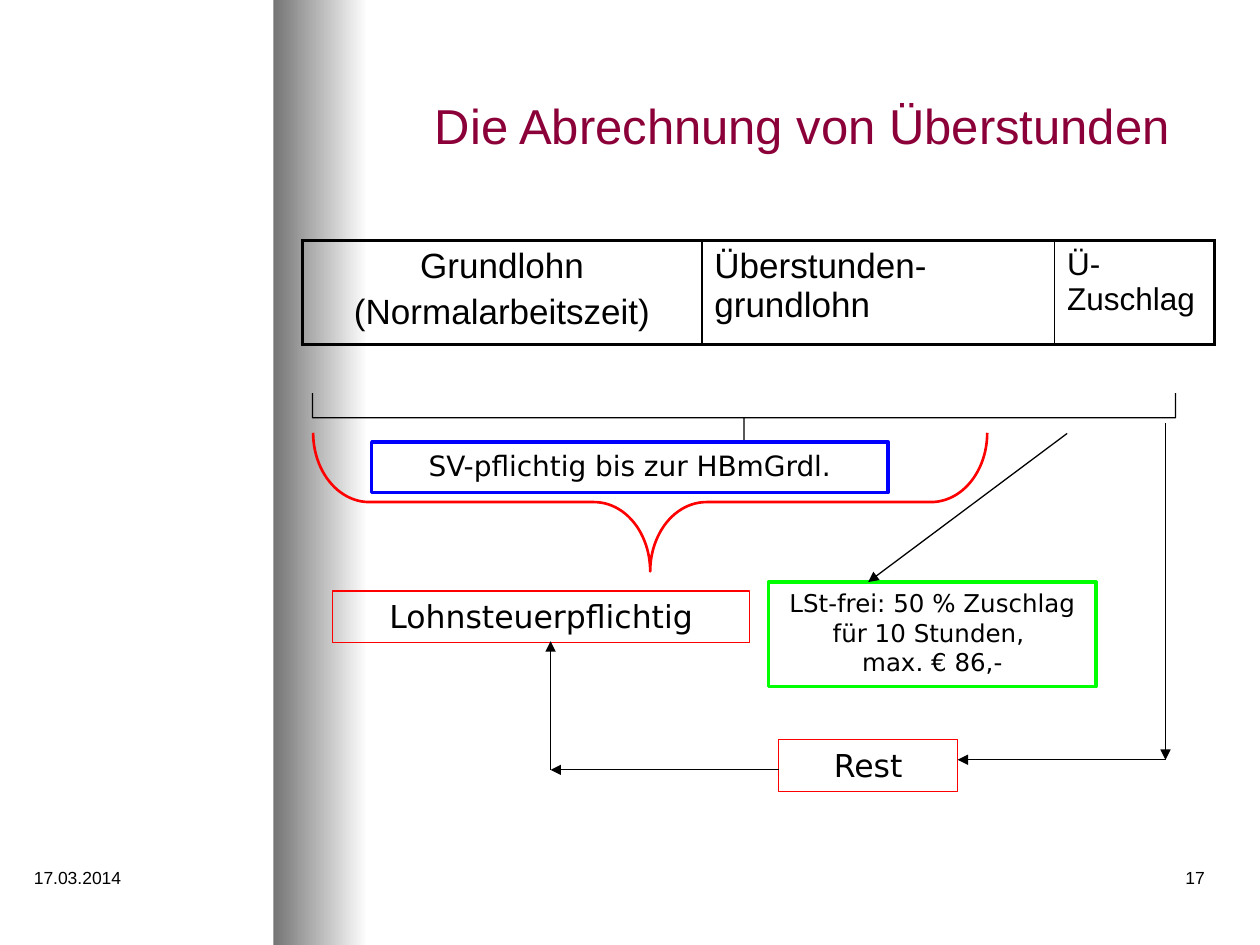
from lxml.etree import SubElement
from pptx import Presentation
from pptx.dml.color import RGBColor
from pptx.enum.shapes import MSO_CONNECTOR, MSO_SHAPE
from pptx.enum.text import MSO_ANCHOR, PP_ALIGN
from pptx.oxml.ns import qn
from pptx.util import Inches, Pt

BLACK = RGBColor(0x00, 0x00, 0x00)
WHITE = RGBColor(0xFF, 0xFF, 0xFF)
GREY = RGBColor(0x75, 0x75, 0x75)
WINE = RGBColor(0x8C, 0x00, 0x39)
RED = RGBColor(0xFF, 0x00, 0x00)
GREEN = RGBColor(0x00, 0xFF, 0x00)
BLUE = RGBColor(0x00, 0x00, 0xFF)
SANS = "Arial"
LABEL_FONT = "DejaVu Sans"


class SlideBuilder:
    """Holds the current slide and draws its elements in one style."""

    def __init__(self, slide):
        self.slide = slide

    def style(self, frame, size, font=SANS, color=BLACK, align=PP_ALIGN.LEFT):
        for paragraph in frame.paragraphs:
            paragraph.alignment = align
            for run in paragraph.runs:
                run.font.size = Pt(size)
                run.font.name = font
                run.font.bold = False
                run.font.color.rgb = color

    def title(self, text, *place):
        heading = self.slide.shapes.title
        heading.left, heading.top, heading.width, heading.height = map(Inches, place)
        heading.text_frame.text = text
        heading.text_frame.vertical_anchor = MSO_ANCHOR.MIDDLE
        self.style(heading.text_frame, 28, color=WINE, align=PP_ALIGN.RIGHT)

    def footer(self, text, left, align):
        note = self.slide.shapes.add_textbox(*map(Inches, (left, 6.83, 2.08, 0.5)))
        note.text_frame.word_wrap = True
        note.text_frame.text = text
        self.style(note.text_frame, 10, align=align)

    def gradient_band(self, *place):
        band = self.slide.shapes.add_shape(MSO_SHAPE.RECTANGLE, *map(Inches, place))
        band.shadow.inherit = False
        band.line.fill.background()
        band.fill.gradient()
        band.fill.gradient_angle = 0
        for stop, color in zip(band.fill.gradient_stops, (GREY, WHITE)):
            stop.color.rgb = color

    def outline(self, kind, place, color, weight):
        shape = self.slide.shapes.add_shape(kind, *map(Inches, place))
        shape.shadow.inherit = False
        shape.fill.background()
        shape.line.color.rgb = color
        shape.line.width = Pt(weight)
        return shape

    def box(self, text, place, color, weight, size):
        label = self.outline(MSO_SHAPE.RECTANGLE, place, color, weight)
        label.text_frame.word_wrap = True
        label.text_frame.vertical_anchor = MSO_ANCHOR.TOP
        label.text_frame.text = text
        self.style(label.text_frame, size, LABEL_FONT, align=PP_ALIGN.CENTER)

    def brace(self, place, color, weight, curve):
        brace = self.outline(MSO_SHAPE.RIGHT_BRACE, place, color, weight)
        brace.adjustments[0] = curve
        brace.adjustments[1] = 0.5
        brace.rotation = 90

    def arrow(self, start, end):
        line = self.slide.shapes.add_connector(
            MSO_CONNECTOR.STRAIGHT, *map(Inches, start + end))
        line.line.color.rgb = BLACK
        line.line.width = Pt(0.75)
        SubElement(line.line._get_or_add_ln(), qn("a:tailEnd"), type="triangle")
        SubElement(line._element.spPr, qn("a:effectLst"))

    def border(self, cell, side, weight):
        edge = SubElement(cell._tc.get_or_add_tcPr(), qn(f"a:ln{side}"), w=str(Pt(weight)))
        SubElement(SubElement(edge, qn("a:solidFill")), qn("a:srgbClr"), val=str(BLACK))

    def table(self, place, columns):
        wages = self.slide.shapes.add_table(1, len(columns), *map(Inches, place)).table
        wages.first_row = wages.horz_banding = False
        last = len(columns) - 1
        for index, (text, width, size, align) in enumerate(columns):
            wages.columns[index].width = Inches(width)
            cell = wages.cell(0, index)
            cell.text_frame.text = text
            self.style(cell.text_frame, size, align=align)
            for paragraph in cell.text_frame.paragraphs[1:]:
                paragraph.space_before = Pt(size * 0.2)
            weights = {"L": 1 if index else 2.25, "R": 1 if index < last else 2.25,
                       "T": 2.25, "B": 2.25}
            for side, weight in weights.items():
                self.border(cell, side, weight)
            cell.fill.background()


def main():
    presentation = Presentation()
    presentation.slide_width = Inches(10)
    presentation.slide_height = Inches(7.5)
    page = SlideBuilder(presentation.slides.add_slide(presentation.slide_layouts[5]))

    page.gradient_band(2.17, 0, 0.75, 7.5)
    page.footer("17.03.2014", 0.17, PP_ALIGN.LEFT)
    page.footer("17", 7.58, PP_ALIGN.RIGHT)
    page.title("Die Abrechnung von Überstunden", 0.63, 0.33, 8.75, 1.33)
    page.table((2.4, 1.91, 7.24, 0.78), [
        ("Grundlohn\n(Normalarbeitszeit)", 3.17, 20, PP_ALIGN.CENTER),
        ("Überstunden-\vgrundlohn", 2.8, 20, PP_ALIGN.LEFT),
        ("Ü-Zuschlag", 1.27, 18, PP_ALIGN.LEFT),
    ])

    page.brace((5.71, -0.11, 0.39, 6.85), BLACK, 0.75, 0)
    page.box("SV-pflichtig bis zur HBmGrdl.", (2.95, 3.51, 4.1, 0.4), BLUE, 2, 16)
    page.brace((4.61, 1.31, 1.1, 5.35), RED, 1.5, 0.405)
    page.box("Lohnsteuerpflichtig", (2.64, 4.69, 3.31, 0.41), RED, 0.75, 18)
    page.box("LSt-frei: 50 % Zuschlag für 10 Stunden, \vmax. € 86,-",
             (6.1, 4.62, 2.6, 0.83), GREEN, 2, 14)
    page.box("Rest", (6.18, 5.87, 1.42, 0.41), RED, 0.75, 18)

    for start, end in [
        ((8.47, 3.44), (6.89, 4.62)),
        ((9.25, 3.36), (9.25, 6.03)),
        ((9.25, 6.03), (7.6, 6.03)),
        ((6.18, 6.11), (4.37, 6.11)),
        ((4.37, 6.11), (4.37, 5.09)),
    ]:
        page.arrow(start, end)

    presentation.save("out.pptx")


if __name__ == "__main__":
    main()
